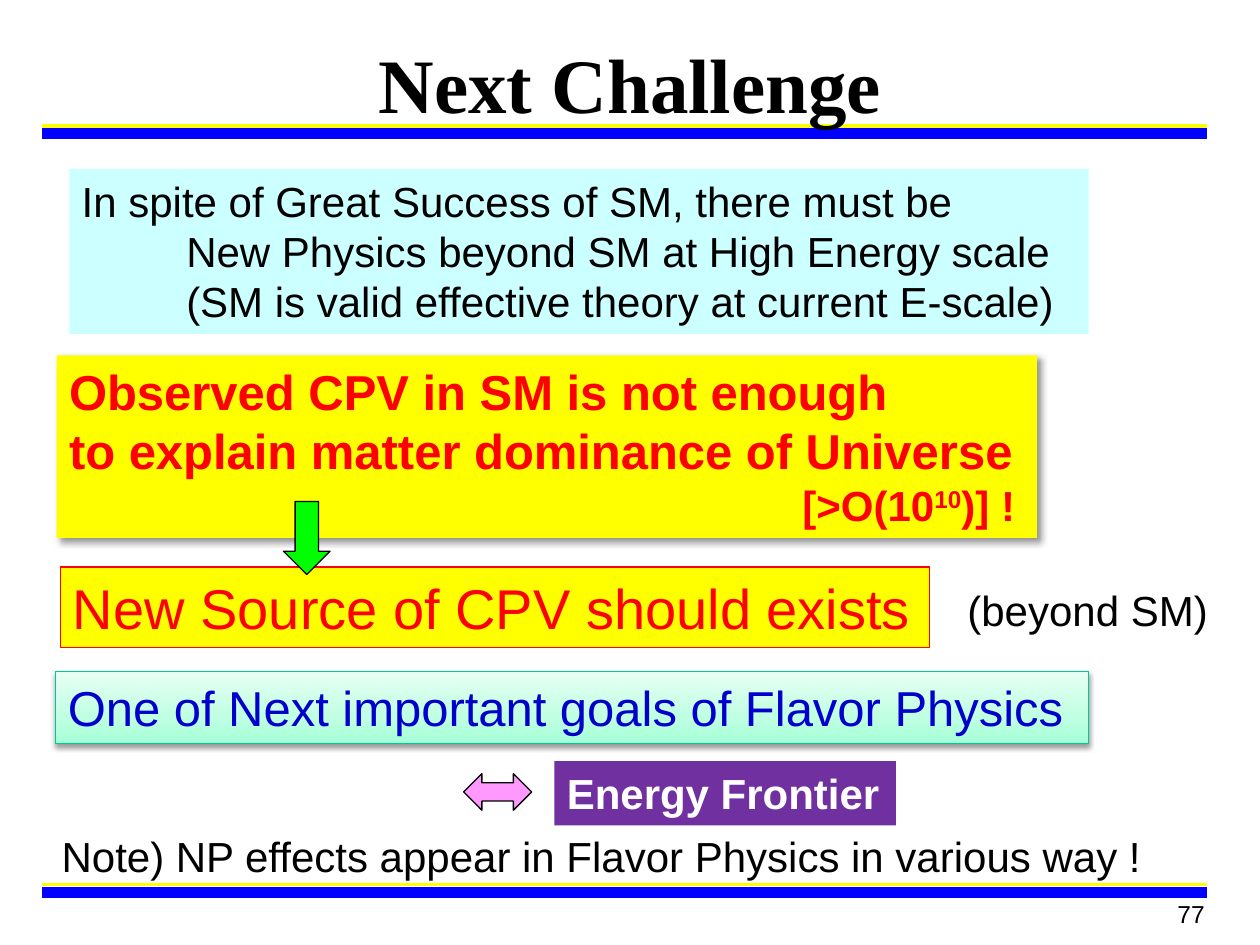
import copy
from dataclasses import dataclass
from typing import Optional

import pptx
import pptx.dml.color
import pptx.enum.shapes
import pptx.enum.text
import pptx.oxml
import pptx.oxml.ns
import pptx.oxml.xmlchemy
import pptx.util
from pptx.util import Inches

SHAPE = pptx.enum.shapes.MSO_SHAPE
ALIGN = pptx.enum.text.PP_ALIGN
ANCHOR = pptx.enum.text.MSO_ANCHOR
qn = pptx.oxml.ns.qn


@dataclass
class Shadow:
    alpha: int
    blur: float
    distance: float
    angle: int


@dataclass
class Line:
    text: str
    indent: float = 0
    size: Optional[int] = None
    superscript: str = ""
    ending: str = ""


@dataclass
class Box:
    left: float
    top: float
    width: float
    height: float
    lines: list[Line]
    size: int = 24
    color: str = "000000"
    bold: bool = False
    fill: Optional[str] = None
    gradient: tuple[tuple[float, str], ...] = ()
    outline: Optional[str] = None
    shadow: Optional[Shadow] = None
    align: ALIGN = ALIGN.LEFT
    anchor: ANCHOR = ANCHOR.TOP


@dataclass
class Arrow:
    kind: SHAPE
    left: float
    top: float
    width: float
    height: float
    fill: str


def rgb(color: str) -> pptx.dml.color.RGBColor:
    return pptx.dml.color.RGBColor.from_string(color)


def shadow_effect(shadow: Shadow):
    return pptx.oxml.parse_xml(
        f'<a:outerShdw {pptx.oxml.ns.nsdecls("a")} blurRad="{int(shadow.blur * 12700)}" '
        f'dist="{int(shadow.distance * 12700)}" dir="{shadow.angle * 60000}" rotWithShape="0">'
        f'<a:srgbClr val="000000"><a:alpha val="{shadow.alpha * 1000}"/></a:srgbClr></a:outerShdw>')


def style_run(run, font: str, size: int, color: str, bold: bool) -> None:
    run.font.name = font
    run.font.size = pptx.util.Pt(size)
    run.font.bold = bold
    run.font.color.rgb = rgb(color)


def apply_gradient(fill, properties, stops: tuple[tuple[float, str], ...]) -> None:
    fill.gradient()
    fill.gradient_angle = 90
    stop_list = properties.find(qn("a:gradFill")).find(qn("a:gsLst"))
    while len(stop_list) < len(stops):
        stop_list.append(copy.deepcopy(stop_list[0]))
    for stop, (position, color) in zip(fill.gradient_stops, stops):
        stop.position = position
        stop.color.rgb = rgb(color)


def write_line(paragraph, line: Line, box: Box) -> None:
    paragraph.text = line.text
    paragraph.alignment = box.align
    if line.indent:
        paragraph._p.get_or_add_pPr().set("marL", str(Inches(line.indent)))
    if line.superscript:
        raised = paragraph.add_run()
        raised.text = line.superscript
        raised.font._element.set("baseline", "30000")
        paragraph.add_run().text = line.ending
    for run in paragraph.runs:
        style_run(run, "Arial", line.size or box.size, box.color, box.bold)


def draw_box(slide, box: Box) -> None:
    place = [Inches(v) for v in (box.left, box.top, box.width, box.height)]
    if box.fill or box.gradient:
        panel = slide.shapes.add_shape(SHAPE.RECTANGLE, *place)
        panel.shadow.inherit = False
        if box.gradient:
            apply_gradient(panel.fill, panel._element.spPr, box.gradient)
        else:
            panel.fill.solid()
            panel.fill.fore_color.rgb = rgb(box.fill)
        if box.outline:
            panel.line.color.rgb = rgb(box.outline)
            panel.line.width = pptx.util.Pt(0.75)
        else:
            panel.line.fill.background()
        if box.shadow:
            panel._element.spPr.find(qn("a:effectLst")).append(shadow_effect(box.shadow))
    else:
        panel = slide.shapes.add_textbox(*place)
    frame = panel.text_frame
    frame.word_wrap = True
    frame.vertical_anchor = box.anchor
    frame.text = "\n".join(line.text for line in box.lines)
    for paragraph, line in zip(frame.paragraphs, box.lines):
        write_line(paragraph, line, box)


def draw_arrow(slide, arrow: Arrow) -> None:
    block = slide.shapes.add_shape(arrow.kind, Inches(arrow.left), Inches(arrow.top),
                                   Inches(arrow.width), Inches(arrow.height))
    block.shadow.inherit = False
    block.fill.solid()
    block.fill.fore_color.rgb = rgb(arrow.fill)
    block.line.color.rgb = rgb("000000")
    block.line.width = pptx.util.Pt(0.75)


def draw_double_rule(slide, top: float) -> None:
    for y, color, width in ((top, "FFFF00", 2.25), (top + 0.06, "0000FF", 6.25)):
        rule = slide.shapes.add_connector(pptx.enum.shapes.MSO_CONNECTOR.STRAIGHT,
                                          Inches(0.33), Inches(y), Inches(9.58), Inches(y))
        rule.line.color.rgb = rgb(color)
        rule.line.width = pptx.util.Pt(width)
        rule._element.spPr.append(pptx.oxml.xmlchemy.OxmlElement("a:effectLst"))


def write_title(slide, text: str) -> None:
    title = slide.shapes.title
    title.left, title.top, title.width, title.height = (
        Inches(v) for v in (0.75, 0.17, 8.5, 0.97))
    title.text_frame.text = text
    title.text_frame.vertical_anchor = ANCHOR.MIDDLE
    heading = title.text_frame.paragraphs[0]
    heading.alignment = ALIGN.CENTER
    run = heading.runs[0]
    style_run(run, "Times New Roman", 44, "000000", True)
    effects = pptx.oxml.xmlchemy.OxmlElement("a:effectLst")
    effects.append(shadow_effect(Shadow(50, 0, 3, 45)))
    run.font._element.find(qn("a:solidFill")).addnext(effects)
    slide.shapes._spTree.append(title._element)  # in front of the rules


BOXES = [
    Box(7.33, 6.9, 2.33, 0.52, [Line("77")], size=14, align=ALIGN.RIGHT, anchor=ANCHOR.BOTTOM),
    Box(0.55, 1.34, 8.09, 1.31, [
        Line("In spite of Great Success of SM, there must be"),
        Line("New Physics beyond SM at High Energy scale", indent=0.83),
        Line("(SM is valid effective theory at current E-scale)", indent=0.83),
    ], fill="CCFFFF"),
    Box(0.45, 2.82, 7.78, 1.45, [
        Line("Observed CPV in SM is not enough"),
        Line("to explain matter dominance of Universe"),
        Line("[>O(10", indent=5.82, size=24, superscript="10", ending=")] !"),
    ], size=28, color="FF0000", bold=True, fill="FFFF00", shadow=Shadow(40, 4, 3, 45)),
    Box(0.48, 4.5, 6.9, 0.64, [Line("New Source of CPV should exists")],
        size=32, color="FF0000", fill="FFFF00", outline="FF0000"),
    Box(7.58, 4.59, 2.13, 0.51, [Line("(beyond SM)")]),
    Box(0.44, 5.33, 8.2, 0.57, [Line("One of Next important goals of Flavor Physics")],
        size=28, color="0000CC", outline="00C896", shadow=Shadow(38, 3.1, 1.6, 90),
        gradient=((0, "A5FFD6"), (0.35, "BFFFE2"), (1, "E7FFF3"))),
    Box(0.39, 6.54, 8.85, 0.51,
        [Line("Note) NP effects appear in Flavor Physics in various way !")]),
    Box(4.4, 6.04, 2.71, 0.51, [Line("Energy Frontier")],
        color="FFFFFF", bold=True, fill="7030A0"),
]
ARROWS = [
    Arrow(SHAPE.DOWN_ARROW, 2.25, 3.98, 0.37, 0.58, "00FF00"),
    Arrow(SHAPE.LEFT_RIGHT_ARROW, 3.68, 6.14, 0.54, 0.29, "FF99FF"),
]


def main() -> None:
    deck = pptx.Presentation()
    deck.slide_width, deck.slide_height = Inches(10), Inches(7.5)
    slide = deck.slides.add_slide(deck.slide_layouts.get_by_name("Title Only"))
    for top in (1, 7.02):
        draw_double_rule(slide, top)
    write_title(slide, "Next Challenge")
    for box in BOXES:
        draw_box(slide, box)
    for arrow in ARROWS:
        draw_arrow(slide, arrow)
    deck.save("out.pptx")


if __name__ == "__main__":
    main()
